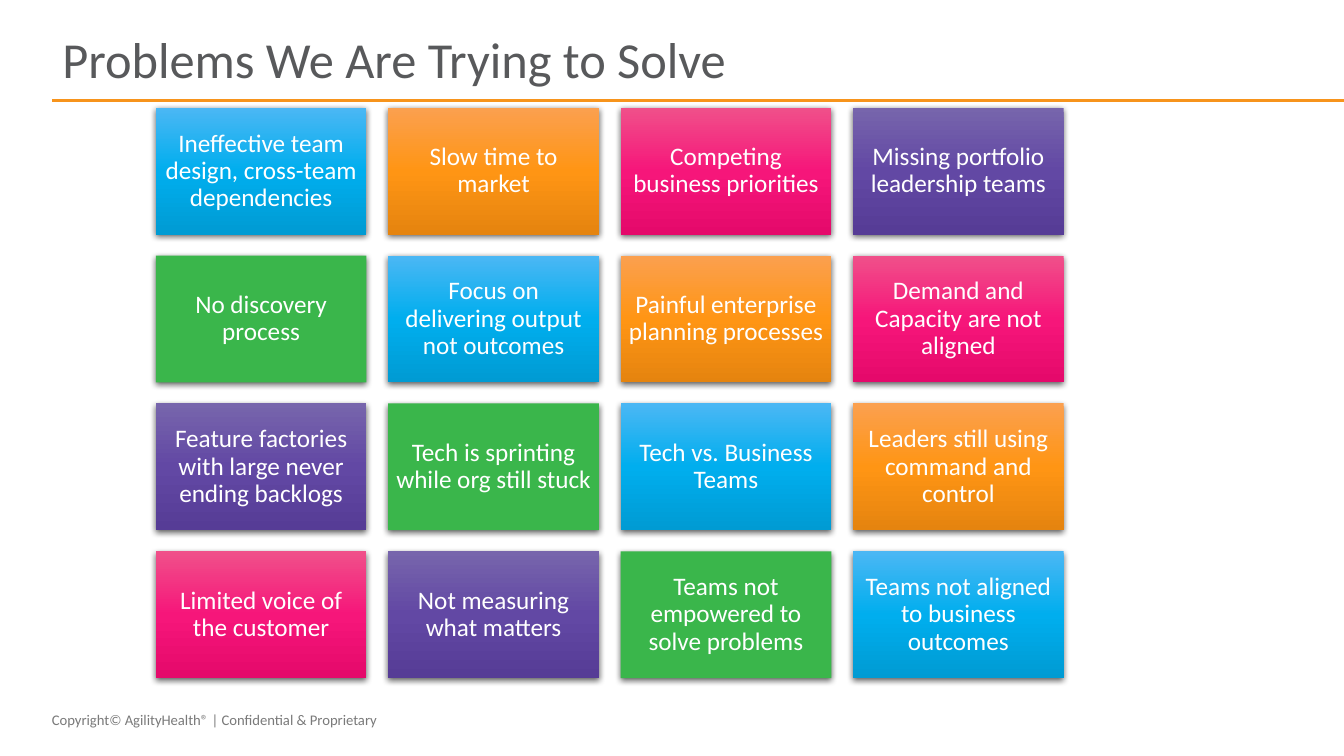
from copy import deepcopy

from pptx import Presentation
from pptx.dml.color import RGBColor
from pptx.enum.shapes import MSO_CONNECTOR, MSO_SHAPE
from pptx.enum.text import MSO_ANCHOR, PP_ALIGN
from pptx.oxml import parse_xml
from pptx.oxml.ns import nsdecls, qn
from pptx.util import Pt

RECT = MSO_SHAPE.RECTANGLE
LINE = MSO_CONNECTOR.STRAIGHT
TOP, MIDDLE = MSO_ANCHOR.TOP, MSO_ANCHOR.MIDDLE
LEFT, CENTER = PP_ALIGN.LEFT, PP_ALIGN.CENTER

COLORS = {"title": "58595B", "rule": "F7941C", "foot": "7A7A7A",
          "white": "FFFFFF", "shadow": "000000"}
# Each hue runs from top to bottom; a single value is a flat fill.
HUES = {
    "blue": ["4BB7F4", "00AEEE", "009BD3"],
    "orange": ["FBA04F", "FF9514", "E5840F"],
    "pink": ["F0508A", "F6167A", "E5096B"],
    "purple": ["7765AC", "6248A4", "563C96"],
    "green": ["3AB64B"],
}
PROBLEMS = [
    ["Ineffective team design, cross-team dependencies",
     "Slow time to market",
     "Competing business priorities",
     "Missing portfolio leadership teams"],
    ["No discovery process",
     "Focus on delivering output not outcomes",
     "Painful enterprise planning processes",
     "Demand and Capacity are not aligned"],
    ["Feature factories with large never ending backlogs",
     "Tech is sprinting while org still stuck",
     "Tech vs. Business Teams",
     "Leaders still using command and control"],
    ["Limited voice of the customer",
     "Not measuring what matters",
     "Teams not empowered to solve problems",
     "Teams not aligned to business outcomes"],
]
GRID_X, GRID_Y = 111.3, 77
STEP_X, STEP_Y = 166, 105.6
TILE_W, TILE_H = 150.5, 90.6


def write(frame, text, size, color, align=LEFT, anchor=TOP, space=1.0,
          inset=(7.2, 3.6)):
    frame.word_wrap = True
    frame.vertical_anchor = anchor
    frame.margin_left = frame.margin_right = Pt(inset[0])
    frame.margin_top = frame.margin_bottom = Pt(inset[1])
    para = frame.paragraphs[0]
    para.alignment = align
    para.line_spacing = space
    run = para.add_run()
    run.text = text
    run.font.name = "Calibri"
    run.font.size = Pt(size)
    run.font.color.rgb = RGBColor.from_string(COLORS[color])


class Canvas:
    def __init__(self, slide):
        self.shapes = slide.shapes

    def text(self, x, y, w, h, text, **style):
        box = self.shapes.add_textbox(Pt(x), Pt(y), Pt(w), Pt(h))
        write(box.text_frame, text, **style)

    def rule(self, x1, x2, y):
        line = self.shapes.add_connector(LINE, Pt(x1), Pt(y), Pt(x2), Pt(y))
        line.line.color.rgb = RGBColor.from_string(COLORS["rule"])
        line.line.width = Pt(2)
        line._element.spPr.append(parse_xml(f"<a:effectLst {nsdecls('a')}/>"))

    def paint(self, tile, hue):
        """Fill a tile with a flat colour or a gradient from top to bottom."""
        fill = tile.fill
        if len(hue) == 1:
            fill.solid()
            fill.fore_color.rgb = RGBColor.from_string(hue[0])
            return
        fill.gradient()
        fill.gradient_angle = 270
        stops = tile._element.spPr.find(f".//{qn('a:gsLst')}")
        stops.append(deepcopy(stops[0]))
        for i, stop in enumerate(fill.gradient_stops):
            stop.position = i / 2
            stop.color.rgb = RGBColor.from_string(hue[i])

    def shade(self, tile):
        """Give a tile a soft shadow below it."""
        tile.shadow.inherit = False
        tile._element.spPr.find(qn("a:effectLst")).append(parse_xml(
            f'<a:outerShdw {nsdecls("a")} blurRad="{Pt(4.5)}" '
            f'dist="{Pt(1.5)}" dir="5400000" algn="ctr" rotWithShape="0">'
            f'<a:srgbClr val="{COLORS["shadow"]}"><a:alpha val="63000"/>'
            '</a:srgbClr></a:outerShdw>'))

    def tile(self, x, y, text, hue):
        tile = self.shapes.add_shape(RECT, Pt(x), Pt(y),
                                     Pt(TILE_W), Pt(TILE_H))
        self.paint(tile, hue)
        tile.line.fill.background()
        self.shade(tile)
        write(tile.text_frame, text, size=18, color="white", align=CENTER,
              anchor=MIDDLE, space=0.9, inset=(5, 5))


def main():
    deck = Presentation()
    deck.slide_width, deck.slide_height = Pt(960), Pt(540)
    page = Canvas(deck.slides.add_slide(deck.slide_layouts[6]))

    page.text(30, 504, 324, 20,
              "Copyright© AgilityHealth® | Confidential & Proprietary",
              size=10.5, color="foot")
    page.rule(37.4, 960, 72)
    page.text(37.4, 19.4, 885, 50.4, "Problems We Are Trying to Solve",
              size=36, color="title", anchor=MIDDLE, space=0.9)

    # Every row starts one hue further back, so hues run along diagonals.
    hues = list(HUES.values())
    for row, line in enumerate(PROBLEMS):
        for col, text in enumerate(line):
            page.tile(GRID_X + col * STEP_X, GRID_Y + row * STEP_Y, text,
                      hues[(col - row) % len(hues)])

    deck.save("out.pptx")


if __name__ == "__main__":
    main()
